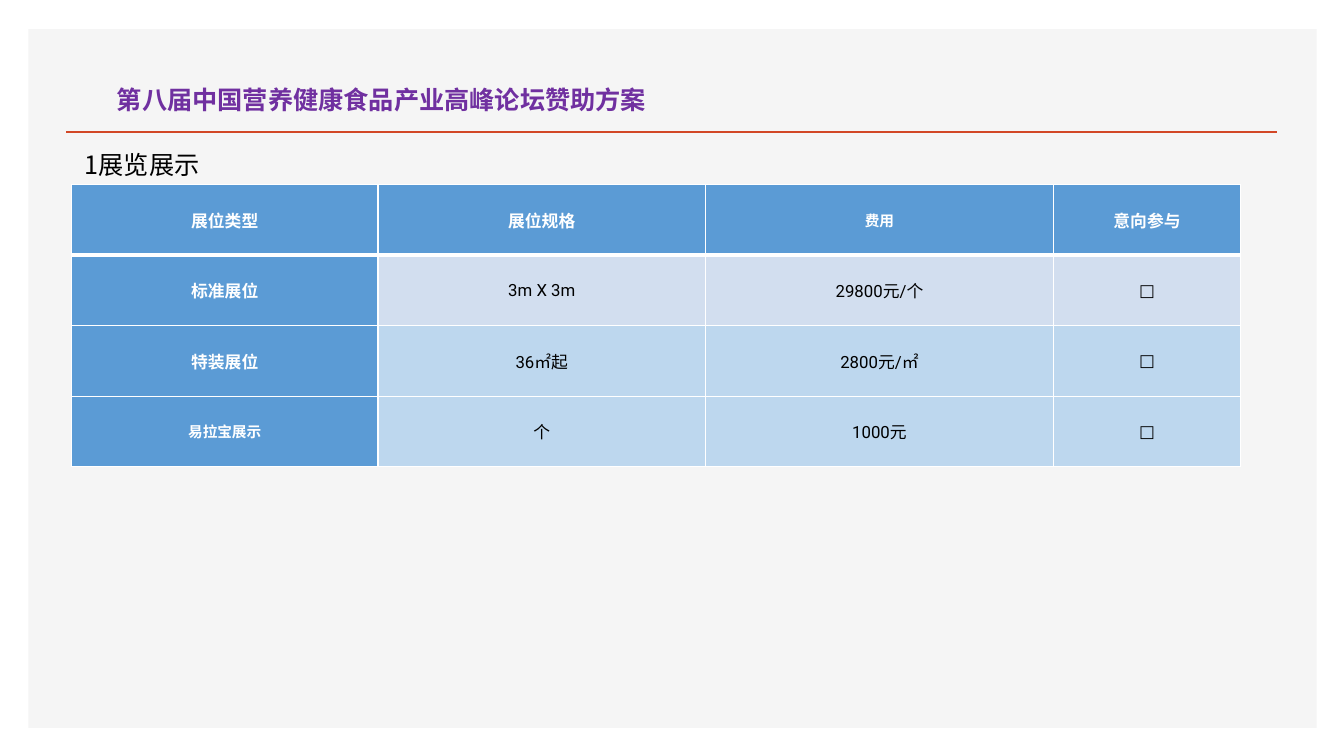
from dataclasses import dataclass

from lxml.etree import SubElement
from pptx import Presentation
from pptx.dml.color import RGBColor
from pptx.enum.shapes import MSO_CONNECTOR, MSO_SHAPE
from pptx.enum.text import MSO_ANCHOR, MSO_AUTO_SIZE, PP_ALIGN
from pptx.oxml.ns import qn
from pptx.util import Pt

CJK_FONT = "Noto Sans CJK SC"
WHITE, BLACK = "FFFFFF", "000000"
HEADER_BLUE, PALE_BLUE, SKY_BLUE = "5B9BD5", "D2DEEF", "BDD7EE"
COLUMN_WIDTHS = (218.9, 234, 248.4, 133.9)
ROW_HEIGHT = 50.4
SMALL_LABELS = ("费用", "易拉宝展示")


@dataclass
class BoothRow:
    texts: tuple[str, ...]
    fill: str


BOOTH_ROWS = (
    BoothRow(("展位类型", "展位规格", "费用", "意向参与"), HEADER_BLUE),
    BoothRow(("标准展位", "3m X 3m", "29800元/个", "□"), PALE_BLUE),
    BoothRow(("特装展位", "36㎡起", "2800元/㎡", "□"), SKY_BLUE),
    BoothRow(("易拉宝展示", "个", "1000元", "□"), SKY_BLUE),
)


def set_color(color_format, hex_color: str) -> None:
    color_format.rgb = RGBColor.from_string(hex_color)


def set_fill(fill, hex_color: str) -> None:
    fill.solid()
    set_color(fill.fore_color, hex_color)


def format_text(paragraph, size: float, font: str, color: str, bold: bool = False) -> None:
    for run in paragraph.runs:
        run.font.size = Pt(size)
        run.font.name = font
        run.font.bold = bold
        set_color(run.font.color, color)
        SubElement(run.font._element, qn("a:ea"), typeface=CJK_FONT)


def set_borders(cell, bottom_width: float) -> None:
    properties = cell._tc.get_or_add_tcPr()
    widths = {"a:lnL": 1, "a:lnR": 1, "a:lnT": 1, "a:lnB": bottom_width}
    for side, width in widths.items():
        border = SubElement(properties, qn(side), w=str(Pt(width)))
        SubElement(SubElement(border, qn("a:solidFill")), qn("a:srgbClr"), val=WHITE)


def add_backdrop(slide) -> None:
    panel = slide.shapes.add_shape(
        MSO_SHAPE.RECTANGLE, Pt(20.2), Pt(20.9), Pt(920.2), Pt(499)
    )
    panel.shadow.inherit = False
    set_fill(panel.fill, "F5F5F5")
    panel.line.fill.background()

    rule = slide.shapes.add_connector(
        MSO_CONNECTOR.STRAIGHT, Pt(47.5), Pt(94.3), Pt(912.2), Pt(94.3)
    )
    rule.line.width = Pt(2)
    set_color(rule.line.color, "D24726")
    SubElement(rule._element.spPr, qn("a:effectLst"))


def place_title(slide) -> None:
    title = slide.shapes.title
    slide.shapes._spTree.append(title._element)  # in front of the panel
    title.left, title.top, title.width, title.height = Pt(41), Pt(35.3), Pt(759.6), Pt(50.4)
    frame = title.text_frame
    frame.text = "第八届中国营养健康食品产业高峰论坛赞助方案"
    frame.auto_size = MSO_AUTO_SIZE.NONE
    frame.vertical_anchor = MSO_ANCHOR.BOTTOM
    heading = frame.paragraphs[0]
    heading.alignment = PP_ALIGN.LEFT
    heading.line_spacing = Pt(26)
    heading._p.get_or_add_pPr().set("marL", str(Pt(35.3)))
    format_text(heading, 18, "Arial", "7030A0", bold=True)


def add_section_label(slide) -> None:
    label = slide.shapes.add_textbox(Pt(53.5), Pt(103), Pt(101.5), Pt(36))
    label.text_frame.word_wrap = False
    label.text_frame.text = "1展览展示"
    format_text(label.text_frame.paragraphs[0], 18, CJK_FONT, BLACK)


def add_booth_table(slide) -> None:
    table = slide.shapes.add_table(
        len(BOOTH_ROWS), len(COLUMN_WIDTHS), Pt(51.1), Pt(131.8),
        Pt(sum(COLUMN_WIDTHS)), Pt(ROW_HEIGHT * len(BOOTH_ROWS)),
    ).table
    table.first_col = True
    table.horz_banding = False
    for column, width in zip(table.columns, COLUMN_WIDTHS):
        column.width = Pt(width)

    for row_index, booth in enumerate(BOOTH_ROWS):
        table.rows[row_index].height = Pt(ROW_HEIGHT)
        for column_index, text in enumerate(booth.texts):
            is_header = row_index == 0 or column_index == 0
            is_small = text in SMALL_LABELS
            cell = table.cell(row_index, column_index)
            cell.text_frame.text = text
            cell.vertical_anchor = MSO_ANCHOR.MIDDLE
            cell.margin_left = cell.margin_right = Pt(5)
            cell.margin_top = cell.margin_bottom = Pt(0)
            set_borders(cell, bottom_width=3 if row_index == 0 else 1)
            set_fill(cell.fill, HEADER_BLUE if is_header else booth.fill)
            paragraph = cell.text_frame.paragraphs[0]
            paragraph.alignment = PP_ALIGN.CENTER
            format_text(
                paragraph,
                10.5 if is_small else 12,
                "Calibri" if is_small else "Roboto",
                WHITE if is_header else BLACK,
                bold=is_header,
            )


def main() -> None:
    presentation = Presentation()
    presentation.slide_width, presentation.slide_height = Pt(960), Pt(540)
    title_only = presentation.slide_layouts.get_by_name("Title Only")
    slide = presentation.slides.add_slide(title_only)
    add_backdrop(slide)
    place_title(slide)
    add_section_label(slide)
    add_booth_table(slide)
    presentation.save("out.pptx")


if __name__ == "__main__":
    main()
